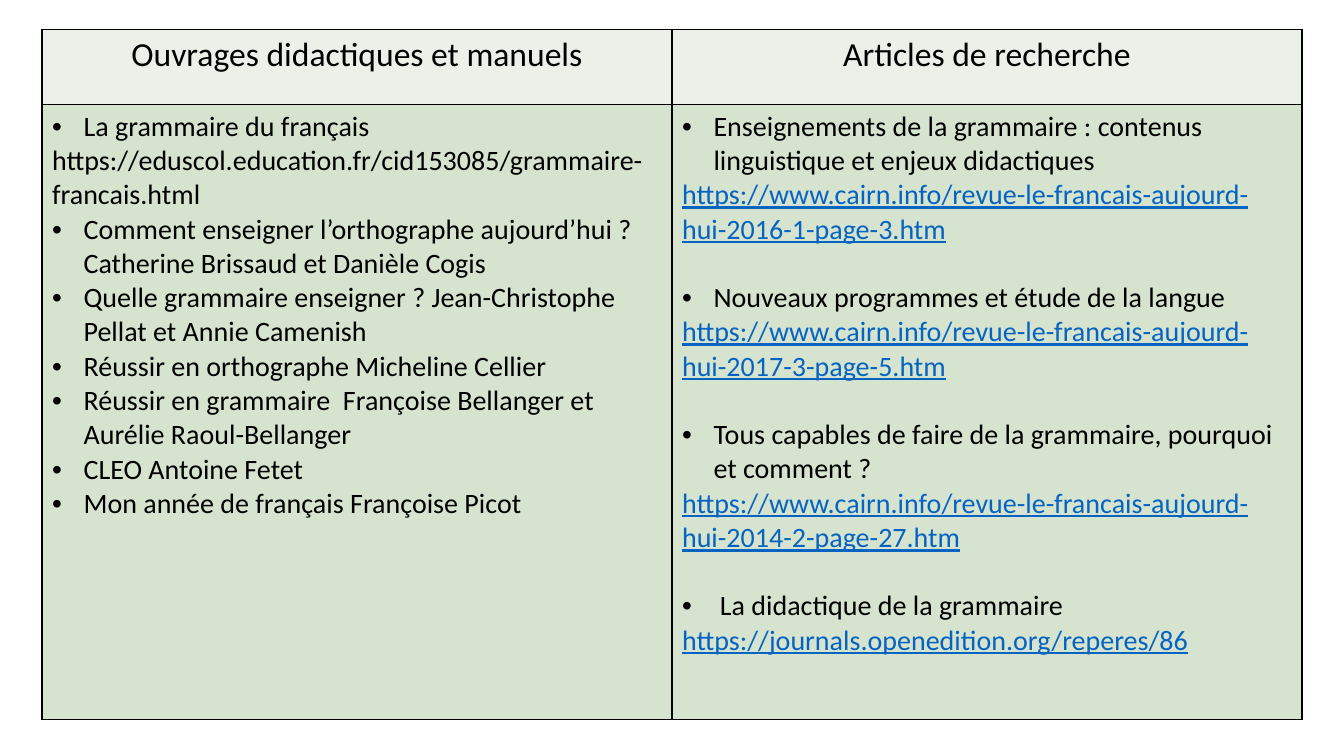
import pptx
import pptx.dml.color
import pptx.enum.text
import pptx.oxml
import pptx.oxml.ns
import pptx.util
from lxml import etree

Pt = pptx.util.Pt
INK, LINK = "000000", "0563C1"
HEADER_FILL, BODY_FILL = "EBF1E9", "D5E3CF"
LINE_HEIGHT = 24.4
INDENT, WIDE_INDENT = 22.5, 27

HEADINGS = ["Ouvrages didactiques et manuels", "Articles de recherche"]
BOOKS = [
    ("La grammaire du français", INDENT),
    ("https://eduscol.education.fr/cid153085/grammaire-francais.html", 0),
    ("Comment enseigner l’orthographe aujourd’hui ? Catherine Brissaud et Danièle Cogis", INDENT),
    ("Quelle grammaire enseigner ? Jean-Christophe Pellat et Annie Camenish", INDENT),
    ("Réussir en orthographe Micheline Cellier", INDENT),
    ("Réussir en grammaire  Françoise Bellanger et Aurélie Raoul-Bellanger", INDENT),
    ("CLEO Antoine Fetet", INDENT),
    ("Mon année de français Françoise Picot", INDENT),
]
ARTICLES = [
    ("Enseignements de la grammaire : contenus linguistique et enjeux didactiques",
     "https://www.cairn.info/revue-le-francais-aujourd-hui-2016-1-page-3.htm", INDENT),
    ("Nouveaux programmes et étude de la langue",
     "https://www.cairn.info/revue-le-francais-aujourd-hui-2017-3-page-5.htm", INDENT),
    ("Tous capables de faire de la grammaire, pourquoi et comment ?",
     "https://www.cairn.info/revue-le-francais-aujourd-hui-2014-2-page-27.htm", INDENT),
    ("La didactique de la grammaire",
     "https://journals.openedition.org/reperes/86", WIDE_INDENT),
]


def color(hex_code):
    """Turn a hex string into a colour."""
    return pptx.dml.color.RGBColor.from_string(hex_code)


def style_cell(cell, fill):
    """Give a cell thin black borders and a solid fill."""
    properties = cell._tc.get_or_add_tcPr()
    for side in ("lnL", "lnR", "lnT", "lnB"):
        border = etree.SubElement(properties, pptx.oxml.ns.qn(f"a:{side}"), w=str(Pt(1)))
        solid = etree.SubElement(border, pptx.oxml.ns.qn("a:solidFill"))
        etree.SubElement(solid, pptx.oxml.ns.qn("a:srgbClr"), val=INK)
    cell.fill.solid()
    cell.fill.fore_color.rgb = color(fill)


def write_paragraph(cell, index, text, size, indent=0, ink=INK):
    """Write one paragraph of a cell, bulleted when it has an indent."""
    frame = cell.text_frame
    paragraph = frame.add_paragraph() if index else frame.paragraphs[0]
    paragraph.text = text
    if indent:
        properties = paragraph._p.get_or_add_pPr()
        properties.set("marL", str(Pt(indent)))
        properties.set("indent", str(-Pt(indent)))
        etree.SubElement(properties, pptx.oxml.ns.qn("a:buFont"), typeface="Arial")
        etree.SubElement(properties, pptx.oxml.ns.qn("a:buChar"), char="•")
    for run in paragraph.runs:
        run.font.name = "Calibri"
        run.font.size = Pt(size)
        run.font.bold = False
        run.font.underline = ink == LINK
        run.font.color.rgb = color(ink)
    return paragraph


def fill_headings(row):
    """Write the centred column headings."""
    for cell, heading in zip(row.cells, HEADINGS):
        style_cell(cell, HEADER_FILL)
        paragraph = write_paragraph(cell, 0, heading, 24)
        paragraph.alignment = pptx.enum.text.PP_ALIGN.CENTER


def fill_books(cell):
    """List the books and manuals."""
    style_cell(cell, BODY_FILL)
    for index, (book, indent) in enumerate(BOOKS):
        write_paragraph(cell, index, book, 20, indent)


def fill_articles(cell):
    """List the articles, each followed by its address."""
    style_cell(cell, BODY_FILL)
    for index, (title, address, indent) in enumerate(ARTICLES):
        heading = write_paragraph(cell, index, title, 20, indent)
        if index:
            heading.space_before = Pt(LINE_HEIGHT)
        write_paragraph(cell, index + 1, address, 20, ink=LINK)


def add_bibliography(slide, left, top, width, header_height, body_height):
    """Place the two-column bibliography table in the given box."""
    frame = slide.shapes.add_table(
        2, 2, Pt(left), Pt(top), Pt(width), Pt(header_height + body_height))
    bibliography = frame.table
    bibliography.horz_banding = False
    for column in bibliography.columns:
        column.width = Pt(width / 2)
    header, body = bibliography.rows
    header.height, body.height = Pt(header_height), Pt(body_height)
    fill_headings(header)
    fill_books(body.cells[0])
    fill_articles(body.cells[1])


def main():
    """Build and save the slide."""
    presentation = pptx.Presentation()
    presentation.slide_width, presentation.slide_height = Pt(960), Pt(540)
    slide = presentation.slides.add_slide(presentation.slide_layouts[6])
    add_bibliography(slide, 30, 21.3, 900, 53.3, 439.2)
    presentation.save("out.pptx")


if __name__ == "__main__":
    main()
